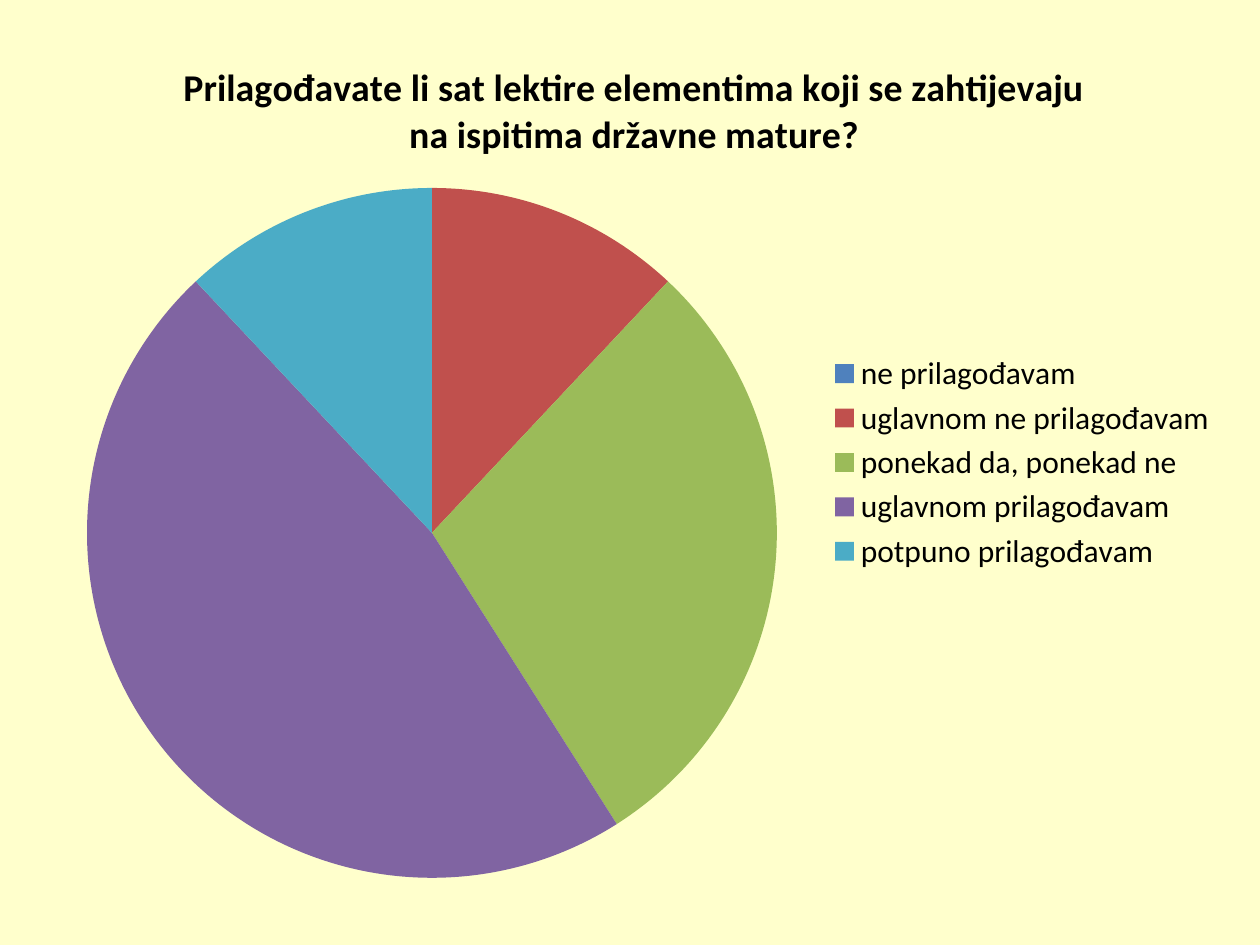
from dataclasses import dataclass

from lxml import etree
from pptx import Presentation
from pptx import util as u
from pptx.chart import data
from pptx.dml.color import RGBColor
from pptx.enum import chart as charts
from pptx.oxml import ns

PX = u.Inches(1) // 126
PAGE = (1260, 945)
CHART_BOX = (39, 29, 1191, 867)
PIE_BOX = (48, 159, 690, 690)  # relative to the chart box

QUESTION = ("Prilagođavate li sat lektire elementima koji se zahtijevaju "
            "na ispitima državne mature?")
ANSWERS = {
    "ne prilagođavam": 0,
    "uglavnom ne prilagođavam": 12,
    "ponekad da, ponekad ne": 29,
    "uglavnom prilagođavam": 47,
    "potpuno prilagođavam": 12,
}


@dataclass(frozen=True)
class Theme:
    background: str = "FFFFCC"
    ink: str = "000000"
    slices: tuple = ("4F81BD", "C0504D", "9BBB59", "8064A2", "4BACC6")
    font: str = "Calibri"
    body_size: float = 18
    title_size: float = 21.6


THEME = Theme()


def paint(fill, colour):
    fill.solid()
    fill.fore_color.rgb = RGBColor.from_string(colour)


def format_font(font, **values):
    for name, value in values.items():
        setattr(font, name, value)
    font.color.rgb = RGBColor.from_string(THEME.ink)


def place_plot(chart, box, chart_box):
    """Fix the inner plot area at a box given relative to the chart box."""
    plot_area = chart.plots[0]._element.getparent()
    for old in plot_area.findall(ns.qn("c:layout")):
        plot_area.remove(old)
    layout = etree.Element(ns.qn("c:layout"))
    manual = etree.SubElement(layout, ns.qn("c:manualLayout"))
    across, down = chart_box[2:]
    settings = {
        "layoutTarget": "inner", "xMode": "edge", "yMode": "edge",
        **{key: f"{length / whole:.4f}" for key, length, whole
           in zip("xywh", box, (across, down, across, down))},
    }
    for tag, value in settings.items():
        etree.SubElement(manual, ns.qn(f"c:{tag}"), val=value)
    plot_area.insert(0, layout)


def add_survey_pie(page, box, question, answers):
    survey = data.CategoryChartData()
    survey.categories = list(answers)
    survey.add_series(question, list(answers.values()))
    chart = page.shapes.add_chart(
        charts.XL_CHART_TYPE.PIE, *(n * PX for n in box), survey).chart
    format_font(chart.font, name=THEME.font, size=u.Pt(THEME.body_size))

    chart.has_title = True
    title = chart.chart_title
    title.include_in_layout = False
    title.text_frame.text = question
    span = title.text_frame.paragraphs[0].runs[0]
    format_font(span.font, name=THEME.font, size=u.Pt(THEME.title_size), bold=True)

    chart.has_legend = True
    chart.legend.position = charts.XL_LEGEND_POSITION.RIGHT
    chart.legend.include_in_layout = False

    plot = chart.plots[0]
    plot.vary_by_categories = True
    for index, colour in enumerate(THEME.slices):
        paint(plot.series[0].points[index].format.fill, colour)
    place_plot(chart, PIE_BOX, box)


def main():
    deck = Presentation()
    deck.slide_width, deck.slide_height = (n * PX for n in PAGE)
    page = deck.slides.add_slide(deck.slide_layouts[6])
    paint(page.background.fill, THEME.background)
    add_survey_pie(page, CHART_BOX, QUESTION, ANSWERS)
    deck.save("out.pptx")


if __name__ == "__main__":
    main()
